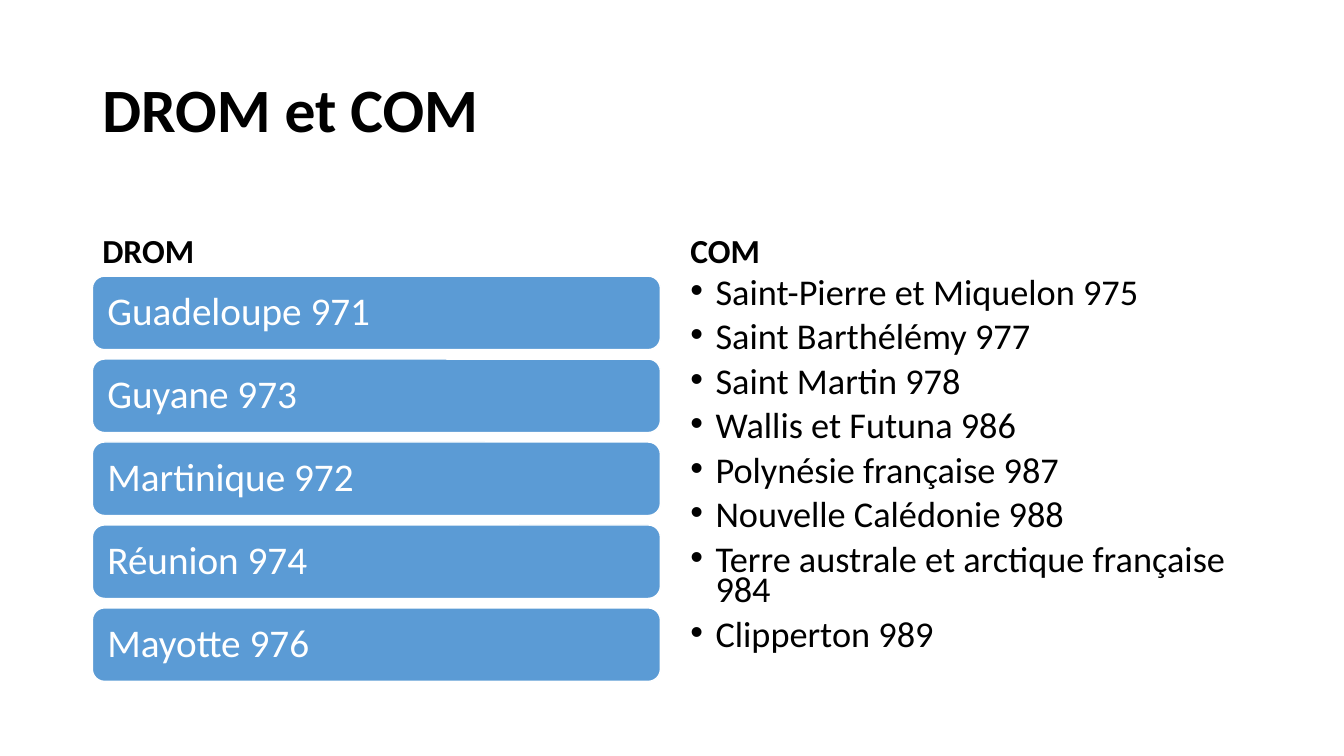
import dataclasses

import pptx
import pptx.dml.color
import pptx.enum.shapes
import pptx.enum.text
import pptx.oxml
import pptx.oxml.ns
import pptx.util

PX = 9525
FONT = "Calibri"
BLACK, WHITE, BLUE = "000000", "FFFFFF", "5B9BD5"
TOP = pptx.enum.text.MSO_ANCHOR.TOP
MIDDLE = pptx.enum.text.MSO_ANCHOR.MIDDLE
BOTTOM = pptx.enum.text.MSO_ANCHOR.BOTTOM

LEFT, RIGHT = 88, 648
LEFT_WIDTH, RIGHT_WIDTH = 541, 544
HEADING_TOP, HEADING_HEIGHT = 177, 86
BODY_TOP, BODY_HEIGHT = 263, 387
BAR_HEIGHT, BAR_PITCH, BAR_INSET = 70, 79, 11
BULLET_INDENT = 24

DROM = ["Guadeloupe 971", "Guyane 973", "Martinique 972", "Réunion 974", "Mayotte 976"]
COM = [
    "Saint-Pierre et Miquelon 975",
    "Saint Barthélémy 977",
    "Saint Martin 978",
    "Wallis et Futuna 986",
    "Polynésie française 987",
    "Nouvelle Calédonie 988",
    "Terre australe et arctique française 984",
    "Clipperton 989",
]


@dataclasses.dataclass
class TextBlock:
    """Describe a text box and the style of its paragraphs."""

    lines: list[str]
    left: int
    top: int
    width: int
    height: int
    size: float
    anchor: pptx.enum.text.MSO_ANCHOR
    bold: bool = False
    bulleted: bool = False
    line_spacing: float = 0.9
    space_before: int = 0


BLOCKS = [
    TextBlock(["DROM et COM"], LEFT, 38, 1104, 139, 44, MIDDLE, bold=True),
    TextBlock(["DROM"], LEFT, HEADING_TOP, LEFT_WIDTH, HEADING_HEIGHT, 24, BOTTOM, bold=True),
    TextBlock(["COM"], RIGHT, HEADING_TOP, RIGHT_WIDTH, HEADING_HEIGHT, 24, BOTTOM, bold=True),
    TextBlock(COM, RIGHT, BODY_TOP, RIGHT_WIDTH, BODY_HEIGHT, 25.9, TOP,
              bulleted=True, line_spacing=0.7, space_before=10),
]


def px(n: int) -> pptx.util.Emu:
    """Turn pixels into EMU."""
    return pptx.util.Emu(n * PX)


def rgb(value: str) -> pptx.dml.color.RGBColor:
    """Turn a hex string into a colour."""
    return pptx.dml.color.RGBColor.from_string(value)


def style(p, size: float, color: str, bold: bool = False, line_spacing: float = 0.9) -> None:
    """Format a paragraph and its runs."""
    p.alignment = pptx.enum.text.PP_ALIGN.LEFT
    p.line_spacing = line_spacing
    for r in p.runs:
        r.font.name = FONT
        r.font.size = pptx.util.Pt(size)
        r.font.bold = bold
        r.font.color.rgb = rgb(color)


def add_bullet(p) -> None:
    """Give a paragraph a hanging round bullet."""
    pPr = p._p.get_or_add_pPr()
    pPr.set("marL", str(px(BULLET_INDENT)))
    pPr.set("indent", str(-px(BULLET_INDENT)))
    ns = pptx.oxml.ns.nsdecls("a")
    pPr.append(pptx.oxml.parse_xml(f'<a:buFont {ns} typeface="Arial"/>'))
    pPr.append(pptx.oxml.parse_xml(f'<a:buChar {ns} char="•"/>'))


def add_block(s, block: TextBlock) -> None:
    """Draw a text block."""
    sp = s.shapes.add_textbox(px(block.left), px(block.top), px(block.width), px(block.height))
    tf = sp.text_frame
    tf.word_wrap = True
    tf.vertical_anchor = block.anchor
    tf.text = "\n".join(block.lines)
    for p in tf.paragraphs:
        style(p, block.size, BLACK, block.bold, block.line_spacing)
        p.space_before = pptx.util.Pt(block.space_before)
        if block.bulleted:
            add_bullet(p)


def add_bar(s, text: str, top: int) -> None:
    """Draw a rounded bar with its territory name."""
    sp = s.shapes.add_shape(pptx.enum.shapes.MSO_SHAPE.ROUNDED_RECTANGLE,
                            px(LEFT), px(top), px(LEFT_WIDTH), px(BAR_HEIGHT))
    sp.shadow.inherit = False
    sp.fill.solid()
    sp.fill.fore_color.rgb = rgb(BLUE)
    sp.line.color.rgb = rgb(WHITE)
    sp.line.width = pptx.util.Pt(1)
    tf = sp.text_frame
    tf.word_wrap = True
    tf.vertical_anchor = MIDDLE
    tf.margin_left = tf.margin_right = px(BAR_INSET)
    tf.margin_top = tf.margin_bottom = px(BAR_INSET)
    tf.text = text
    style(tf.paragraphs[0], 28, WHITE)


def main() -> None:
    """Build the slide and save it."""
    prs = pptx.Presentation()
    prs.slide_width, prs.slide_height = px(1280), px(720)
    s = prs.slides.add_slide(prs.slide_layouts[6])
    for block in BLOCKS:
        add_block(s, block)
    for i, text in enumerate(DROM):
        add_bar(s, text, BODY_TOP + i * BAR_PITCH)
    prs.save("out.pptx")


if __name__ == "__main__":
    main()
